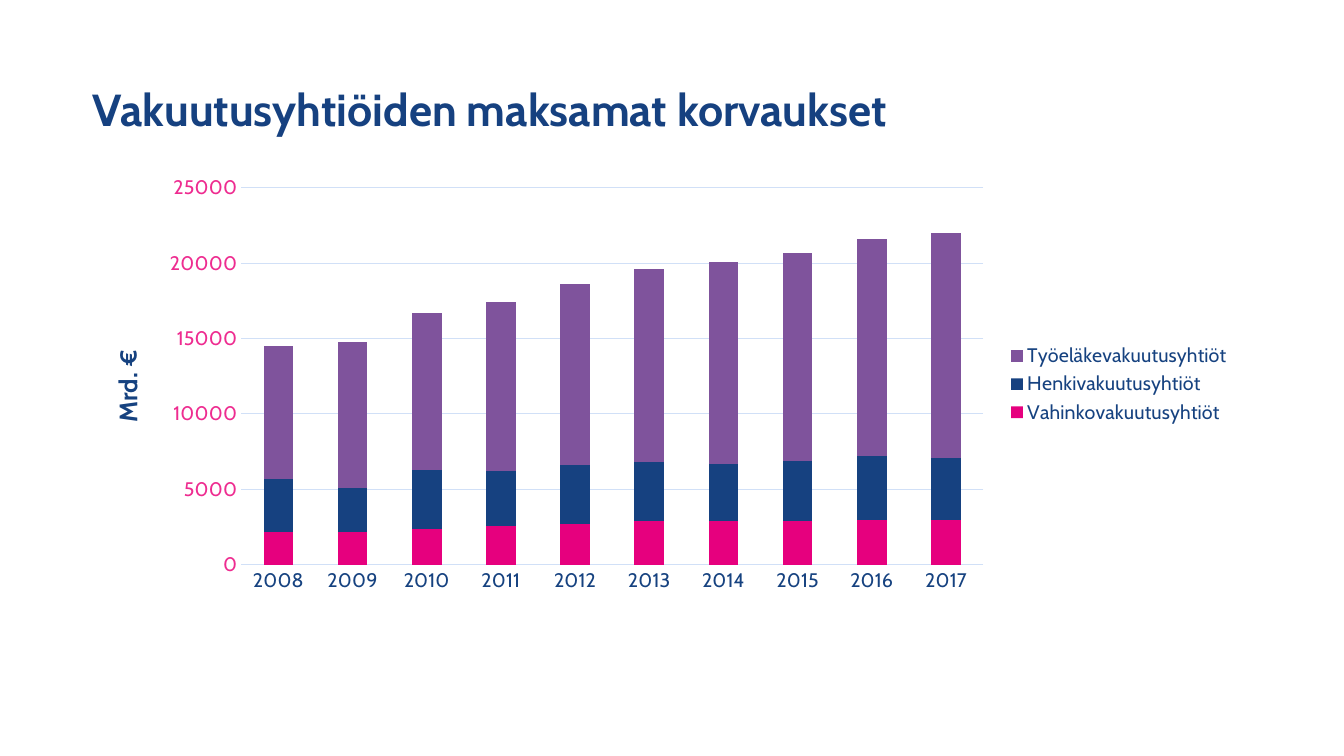
from lxml.etree import SubElement
from pptx import Presentation
from pptx.chart.data import CategoryChartData
from pptx.dml.color import RGBColor
from pptx.enum.chart import XL_CHART_TYPE as ChartType
from pptx.enum.chart import XL_LEGEND_POSITION as LegendPosition
from pptx.enum.chart import XL_TICK_MARK as TickMark
from pptx.enum.text import MSO_ANCHOR as Anchor
from pptx.enum.text import PP_ALIGN as Align
from pptx.oxml.ns import qn
from pptx.util import Cm, Pt

TITLE = "Vakuutusyhtiöiden maksamat korvaukset"
UNIT = "Mrd. €"
YEARS = [str(year) for year in range(2008, 2018)]
CLAIMS = [
    ("Vahinkovakuutusyhtiöt", "pink",
     (2200, 2200, 2400, 2600, 2700, 2900, 2900, 2900, 3000, 3000)),
    ("Henkivakuutusyhtiöt", "navy",
     (3500, 2900, 3900, 3600, 3900, 3900, 3800, 4000, 4200, 4100)),
    ("Työeläkevakuutusyhtiöt", "purple",
     (8800, 9700, 10400, 11200, 12000, 12800, 13400, 13800, 14400, 14900)),
]
COLORS = {"navy": "164180", "text": "164280", "pink": "E6007E",
          "purple": "7F539C", "scale": "EE2C90", "grid": "D1E0F7"}
FONT = "Cabin"
LEFT, WIDTH = Cm(2.08), Cm(29.21)


def color(name):
    return RGBColor.from_string(COLORS[name])


def style(font, size, name, bold=False):
    font.name, font.size, font.bold = FONT, Pt(size), bold
    font.color.rgb = color(name)


def style_line(line):
    line.color.rgb = color("grid")
    line.width = Pt(0.75)


def place(part, index, **fractions):
    """Fix a chart part at fractions of the chart's width and height."""
    for auto_layout in part.findall(qn("c:layout")):
        part.remove(auto_layout)
    layout = SubElement(part, qn("c:layout"))
    part.insert(index, layout)
    manual = SubElement(layout, qn("c:manualLayout"))
    if "w" in fractions:
        SubElement(manual, qn("c:layoutTarget")).set("val", "inner")
    for side in ("x", "y"):
        SubElement(manual, qn(f"c:{side}Mode")).set("val", "edge")
    for side, fraction in fractions.items():
        SubElement(manual, qn(f"c:{side}")).set("val", str(fraction))


def add_title(slide):
    title = slide.shapes.title
    title.left, title.top, title.width, title.height = LEFT, Cm(0.99), WIDTH, Cm(3.68)
    frame = title.text_frame
    frame.word_wrap = True
    frame.vertical_anchor = Anchor.MIDDLE
    paragraph = frame.paragraphs[0]
    paragraph.alignment = Align.LEFT
    paragraph.line_spacing = 0.9
    run = paragraph.add_run()
    run.text = TITLE
    style(run.font, 32, "navy", bold=True)


def add_claims_chart(slide):
    claims = CategoryChartData(number_format="0")
    claims.categories = YEARS
    for company_type, _, amounts in CLAIMS:
        claims.add_series(company_type, amounts)
    chart = slide.shapes.add_chart(ChartType.COLUMN_STACKED, LEFT, Cm(4.22),
                                   WIDTH, Cm(10.92), claims).chart
    style(chart.font, 14, "text")
    chart.has_title = False
    chart.has_legend = True
    chart.legend.position = LegendPosition.RIGHT
    chart.legend.include_in_layout = False
    style(chart.legend.font, 14, "text")

    bars = chart.plots[0]
    bars.gap_width, bars.overlap = 150, 100
    bars.vary_by_categories = False
    for series, (_, fill_name, _) in zip(bars.series, CLAIMS):
        series.format.fill.solid()
        series.format.fill.fore_color.rgb = color(fill_name)

    years, amounts = chart.category_axis, chart.value_axis
    for axis, name in ((years, "text"), (amounts, "scale")):
        axis.major_tick_mark = axis.minor_tick_mark = TickMark.NONE
        style(axis.tick_labels.font, 14, name)
    style_line(years.format.line)
    style_line(amounts.major_gridlines.format.line)
    amounts.format.line.fill.background()
    amounts.minimum_scale, amounts.maximum_scale = 0, 25000
    amounts.major_unit = 5000

    unit = amounts.axis_title.text_frame.paragraphs[0].add_run()
    unit.text = UNIT
    style(unit.font, 18, "text", bold=True)
    unit_title = chart.element.xpath(".//c:valAx/c:title")[0]
    body = unit_title.xpath(".//a:bodyPr")[0]
    body.set("rot", "-5400000")
    body.set("vert", "horz")
    place(unit_title, 1, x=0.02, y=0.41)
    place(chart.element.xpath(".//c:plotArea")[0], 0, x=0.137, y=0.047, w=0.64, h=0.87)


def main():
    deck = Presentation()
    deck.slide_width, deck.slide_height = Cm(33.87), Cm(19.05)
    slide = deck.slides.add_slide(deck.slide_layouts[5])
    add_title(slide)
    add_claims_chart(slide)
    deck.save("out.pptx")


if __name__ == "__main__":
    main()
